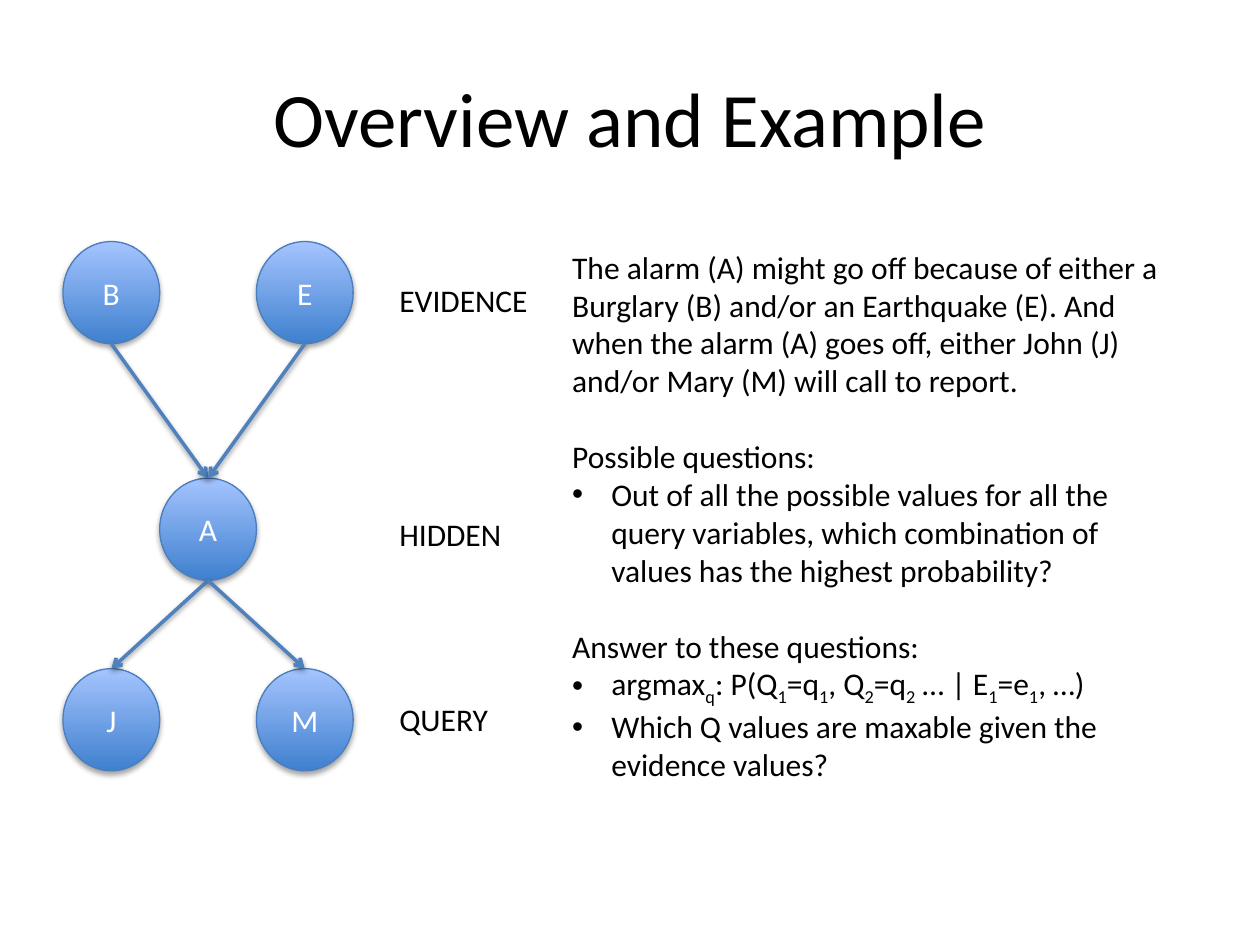
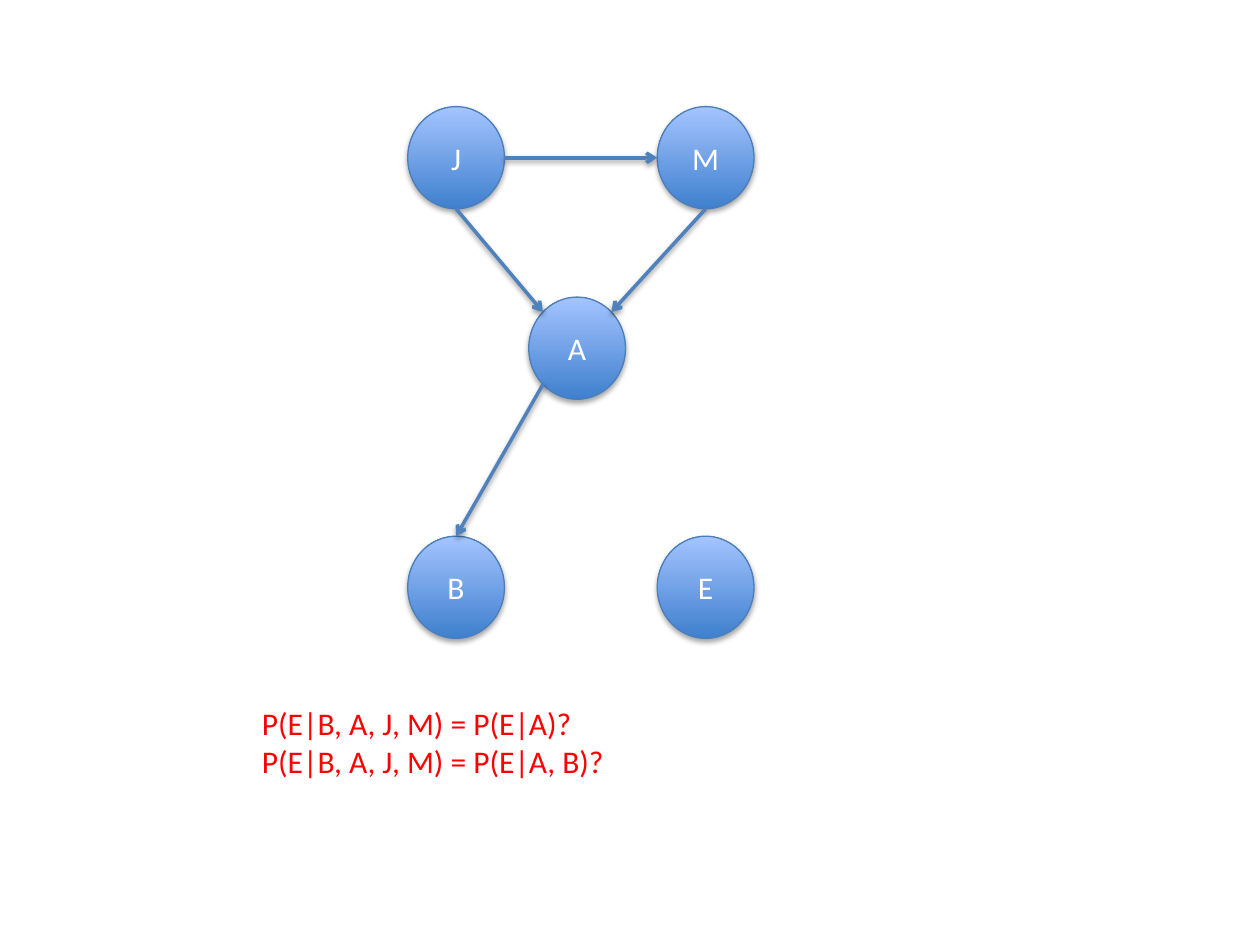
from dataclasses import dataclass
from math import cos, radians, sin

from lxml import etree
from pptx import Presentation
from pptx.dml.color import RGBColor
from pptx.enum.shapes import MSO_CONNECTOR, MSO_SHAPE
from pptx.enum.text import MSO_ANCHOR, MSO_AUTO_SIZE, PP_ALIGN
from pptx.oxml.ns import qn
from pptx.util import Cm, Pt

OVAL, LINE = MSO_SHAPE.OVAL, MSO_CONNECTOR.STRAIGHT
MID, TOP = MSO_ANCHOR.MIDDLE, MSO_ANCHOR.TOP
LEFT, MIDDLE = PP_ALIGN.LEFT, PP_ALIGN.CENTER
GROW, FIXED = MSO_AUTO_SIZE.SHAPE_TO_FIT_TEXT, MSO_AUTO_SIZE.NONE


@dataclass(frozen=True)
class Theme:
    font: str = "Calibri"
    head: int = 44
    text: int = 18
    black: str = "000000"
    white: str = "FFFFFF"
    red: str = "FF0000"
    dark: str = "3F80CE"
    light: str = "A4C4FF"
    edge: str = "4B7EBC"
    arrow: str = "4F81BD"


THEME = Theme()
WIDE, HIGH = 1.95, 2.06  # node size in cm
GAP = 21.8  # points between text blocks, one line of text

# Compass points of an oval: connection site and angle from the right, clockwise
SITES = {"N": (0, 270), "W": (2, 180), "SW": (3, 135), "S": (4, 90),
         "E": (6, 0), "NE": (7, 315), "NW": (1, 225)}

TITLE = "Overview and Example"

# Node: left and top in cm. Link: from, site, to, site.
ROWS = {"EVIDENCE": (4.87, 5.54), "HIDDEN": (9.64, 10.26), "QUERY": (13.48, 13.99)}
CAUSE, ALARM, CALL = (top for top, _ in ROWS.values())
COLS = [1.27 + WIDE * i for i in range(3)]
NET = {"A": (COLS[1], ALARM), "J": (COLS[0], CALL), "M": (COLS[2], CALL),
       "B": (COLS[0], CAUSE), "E": (COLS[2], CAUSE)}
LINKS = [("A", "S", "J", "N"), ("A", "S", "M", "N"),
         ("B", "S", "A", "N"), ("E", "S", "A", "N")]

ORDER = {"J": (8.22, 2.15), "M": (13.25, 2.15), "A": (10.66, 5.99),
         "B": (8.22, 10.81), "E": (13.25, 10.81)}
STEPS = [("J", "E", "M", "W"), ("J", "S", "A", "NW"),
         ("M", "S", "A", "NE"), ("A", "SW", "B", "N")]

# Each block: a lead line, then its bullets. Text between ~ marks is subscript.
BLOCKS = [
    ("The alarm (A) might go off because of either a Burglary (B) and/or an "
     "Earthquake (E). And when the alarm (A) goes off, either John (J) and/or "
     "Mary (M) will call to report.", []),
    ("Possible questions:",
     ["Out of all the possible values for all the query variables, which "
      "combination of values has the highest probability?"]),
    ("Answer to these questions:",
     ["argmax~q~: P(Q~1~=q~1~, Q~2~=q~2~ … | E~1~=e~1~, …)",
      "Which Q values are maxable given the evidence values?"]),
]
ASKS = ["P(E|B, A, J, M) = P(E|A)?", "P(E|B, A, J, M) = P(E|A, B)?"]


def rgb(name):
    return RGBColor.from_string(name)


def place(item, left, top, wide, high):
    item.left, item.top, item.width, item.height = map(Cm, (left, top, wide, high))


def write(para, text, color=THEME.black, size=THEME.text, align=LEFT):
    para.alignment = align
    for i, part in enumerate(text.split("~")):
        run = para.add_run()
        run.text = part
        font = run.font
        font.name, font.size = THEME.font, Pt(size)
        font.color.rgb = rgb(color)
        if i % 2:
            run._r.get_or_add_rPr().set("baseline", "-25000")


def lines(frame):
    """Yield the first paragraph, then a new one each time."""
    yield frame.paragraphs[0]
    while True:
        yield frame.add_paragraph()


def shade(item, alpha, dist):
    """Add a soft shadow below; call after fill and line are set."""
    fx = etree.SubElement(item._element.spPr, qn("a:effectLst"))
    drop = etree.SubElement(fx, qn("a:outerShdw"), blurRad=str(Pt(3.1)),
                            dist=str(Pt(dist)), dir="5400000", rotWithShape="0")
    tint = etree.SubElement(drop, qn("a:srgbClr"), val=THEME.black)
    etree.SubElement(tint, qn("a:alpha"), val=str(alpha * 1000))


def node(slide, name, left, top):
    oval = slide.shapes.add_shape(OVAL, Cm(left), Cm(top), Cm(WIDE), Cm(HIGH))
    oval.fill.gradient()
    oval.fill.gradient_angle = 90
    for stop, color in zip(oval.fill.gradient_stops, (THEME.dark, THEME.light)):
        stop.color.rgb = rgb(color)
    oval.line.color.rgb = rgb(THEME.edge)
    oval.line.width = Pt(0.75)
    shade(oval, 35, 1.8)
    oval.text_frame.vertical_anchor = MID
    write(oval.text_frame.paragraphs[0], name, THEME.white, align=MIDDLE)
    return oval


def point(oval, site):
    turn = radians(SITES[site][1])
    return (round(oval.left + oval.width * (1 + cos(turn)) / 2),
            round(oval.top + oval.height * (1 + sin(turn)) / 2))


def link(slide, start, out, end, into):
    arrow = slide.shapes.add_connector(LINE, *point(start, out), *point(end, into))
    arrow.line.color.rgb = rgb(THEME.arrow)
    arrow.line.width = Pt(2)
    etree.SubElement(arrow.line._get_or_add_ln(), qn("a:tailEnd"), type="arrow")
    shade(arrow, 38, 1.6)
    glue = arrow._element.find(".//" + qn("p:cNvCxnSpPr"))
    for tag, oval, site in (("a:stCxn", start, out), ("a:endCxn", end, into)):
        etree.SubElement(glue, qn(tag), id=str(oval.shape_id), idx=str(SITES[site][0]))


def graph(slide, nodes, links):
    ovals = {name: node(slide, name, *spot) for name, spot in nodes.items()}
    for start, out, end, into in links:
        link(slide, ovals[start], out, ovals[end], into)


def note(slide, texts, spot, color=THEME.black):
    frame = slide.shapes.add_textbox(*map(Cm, spot)).text_frame
    frame.word_wrap, frame.auto_size = True, GROW
    for para, text in zip(lines(frame), texts):
        write(para, text, color)


def mark(para, bullet):
    """Set the bullet and hanging indent of a body paragraph."""
    ppr = para._p.get_or_add_pPr()
    hang = Cm(0.79) if bullet else 0
    ppr.set("marL", str(hang))
    ppr.set("indent", str(-hang))
    if bullet:
        etree.SubElement(ppr, qn("a:buFont"), typeface="Arial")
        etree.SubElement(ppr, qn("a:buChar"), char="•")
    else:
        etree.SubElement(ppr, qn("a:buNone"))


def fill(body):
    place(body, 11.28, 4.87, 12.85, 11.02)
    frame = body.text_frame
    frame.auto_size, frame.vertical_anchor = FIXED, TOP
    paras = lines(frame)
    for i, (lead, points) in enumerate(BLOCKS):
        for j, text in enumerate([lead] + points):
            para = next(paras)
            para.space_before = Pt(GAP if i and not j else 0)
            mark(para, j > 0)
            write(para, text)


def main():
    deck = Presentation()
    deck.slide_width, deck.slide_height = Cm(25.4), Cm(19.05)

    first = deck.slides.add_slide(deck.slide_layouts[1])
    title, body = first.placeholders
    place(title, 1.27, 0.76, 22.86, 3.18)
    title.text_frame.vertical_anchor = MID
    write(title.text_frame.paragraphs[0], TITLE, size=THEME.head, align=MIDDLE)
    graph(first, NET, LINKS)
    fill(body)
    for name, (_, top) in ROWS.items():
        note(first, [name], (7.8, top, 3.4, 1.02))

    second = deck.slides.add_slide(deck.slide_layouts[6])
    graph(second, ORDER, STEPS)
    note(second, ASKS, (5.03, 14.07, 12.7, 1.8), THEME.red)

    deck.save("out.pptx")


if __name__ == "__main__":
    main()
